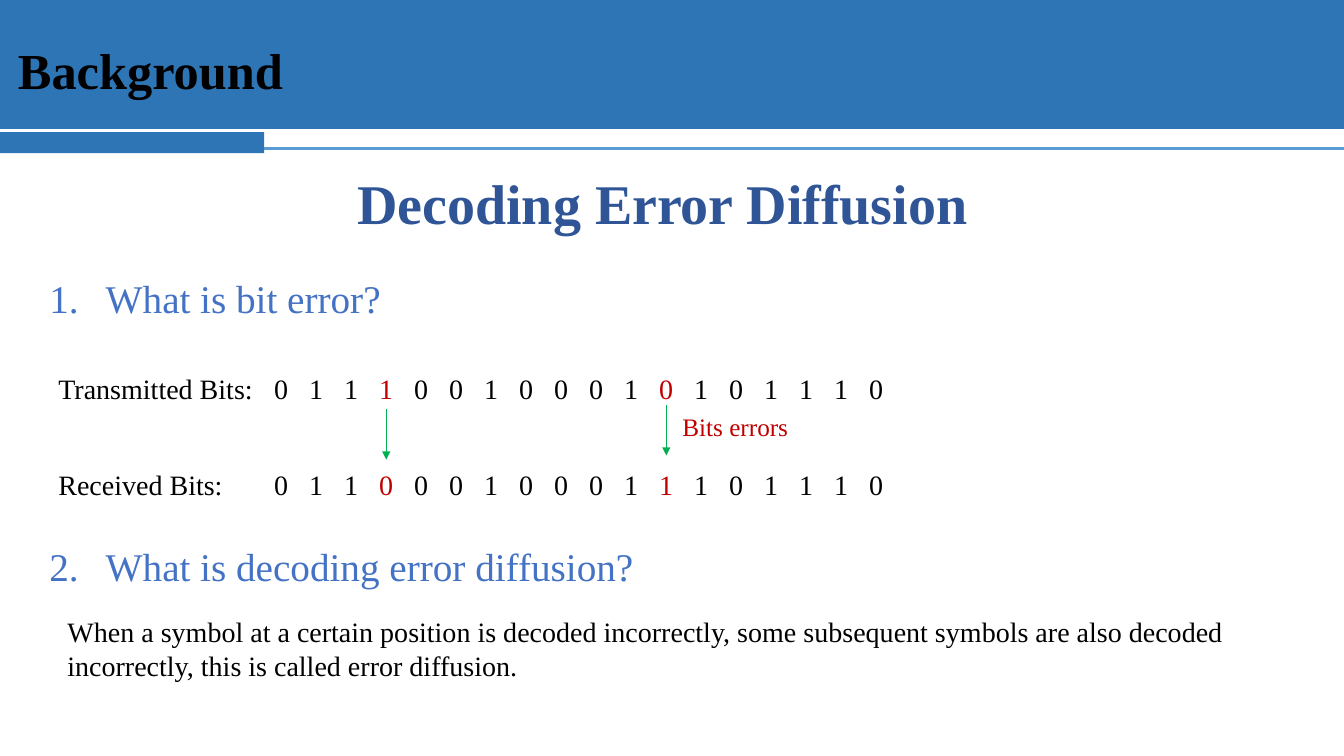
from lxml import etree
from pptx import Presentation
from pptx.dml.color import RGBColor
from pptx.enum.shapes import MSO_CONNECTOR, MSO_SHAPE
from pptx.enum.text import PP_ALIGN
from pptx.oxml.ns import qn
from pptx.util import Inches, Pt

# Content
SECTION = "Background"
TITLE = "Decoding Error Diffusion"
QUESTIONS = [("What is bit error?", 2.67), ("What is decoding error diffusion?", 5.33)]
BIT_ROWS = [
    ("Transmitted Bits:", "011100100010101110"),
    ("Received Bits:", "011000100011101110"),
]
ERROR_LABEL = "Bits errors"
ANSWER = ("When a symbol at a certain position is decoded incorrectly, some subsequent "
          "symbols are also decoded incorrectly, this is called error diffusion.")
ARROW_TOPS = [4.06, 4.02]

# Style
FONT = "Times New Roman"
BAND_BLUE = RGBColor(0x2E, 0x75, 0xB6)
RULE_BLUE = RGBColor(0x5B, 0x9B, 0xD5)
TITLE_BLUE = RGBColor(0x2F, 0x55, 0x97)
QUESTION_BLUE = RGBColor(0x44, 0x72, 0xC4)
ERROR_RED = RGBColor(0xC0, 0x00, 0x00)
ARROW_GREEN = RGBColor(0x00, 0xB0, 0x50)
BLACK = RGBColor(0, 0, 0)
RECTANGLE = MSO_SHAPE.RECTANGLE
STRAIGHT = MSO_CONNECTOR.STRAIGHT
CENTER = PP_ALIGN.CENTER

# Bit grid: each bit sits on a tab stop
BITS_LEFT = Inches(0.48)
TEXT_INSET = Inches(0.1)
FIRST_BIT = Inches(2.14)
BIT_PITCH = Pt(25)
HALF_DIGIT = Pt(5)

prs = Presentation()
prs.slide_width, prs.slide_height = Inches(13.33), Inches(7.5)
slide = prs.slides.add_slide(prs.slide_layouts[6])


def add_band(left, top, width, height):
    band = slide.shapes.add_shape(
        RECTANGLE, Inches(left), Inches(top), Inches(width), Inches(height))
    band.shadow.inherit = False
    band.fill.solid()
    band.fill.fore_color.rgb = BAND_BLUE
    band.line.fill.background()


def add_line(x1, y1, x2, y2, color, width):
    line = slide.shapes.add_connector(STRAIGHT, x1, y1, x2, y2)
    line.line.color.rgb = color
    line.line.width = Pt(width)
    etree.SubElement(line._element.spPr, qn("a:effectLst"))
    return line


def add_frame(left, top, width, height, wrap=True):
    frame = slide.shapes.add_textbox(
        Inches(left), Inches(top), Inches(width), Inches(height)).text_frame
    frame.word_wrap = wrap
    return frame


def style(paragraph, size, color, bold=False):
    font = paragraph.font
    font.name, font.size, font.bold = FONT, Pt(size), bold
    font.color.rgb = color


def add_text(text, box, size, color, bold=False, wrap=True):
    paragraph = add_frame(*box, wrap=wrap).paragraphs[0]
    paragraph.text = text
    style(paragraph, size, color, bold)
    return paragraph


# Header
add_band(0, 0, 13.33, 1.28)
add_band(0, 1.31, 2.62, 0.21)
add_line(Inches(2.62), Inches(1.47), Inches(13.33), Inches(1.47), RULE_BLUE, 2)
add_text(SECTION, (0.08, 0.34, 2.97, 0.71), 36, BLACK, bold=True, wrap=False)
add_text(TITLE, (2.27, 1.62, 8.6, 0.77), 40, TITLE_BLUE, bold=True).alignment = CENTER

# Numbered questions
for number, (question, top) in enumerate(QUESTIONS, 1):
    paragraph = add_text(question, (0.39, top, 6.22, 0.57), 28, QUESTION_BLUE)
    props = paragraph._p.get_or_add_pPr()
    props.set("marL", str(Inches(0.56)))
    props.set("indent", str(-Inches(0.56)))
    numbering = etree.Element(qn("a:buAutoNum"), type="arabicPeriod", startAt=str(number))
    props.insert(0, numbering)

# Bit rows, with the differing bits in red
sent, received = (bits for _, bits in BIT_ROWS)
errors = [i for i, pair in enumerate(zip(sent, received)) if pair[0] != pair[1]]
bits_frame = add_frame(0.48, 3.64, 9.49, 1.38)
for row, (label, bits) in enumerate(BIT_ROWS):
    paragraph = bits_frame.add_paragraph() if row else bits_frame.paragraphs[0]
    tabs = etree.SubElement(paragraph._p.get_or_add_pPr(), qn("a:tabLst"))
    paragraph.add_run().text = label
    for i, bit in enumerate(bits):
        etree.SubElement(tabs, qn("a:tab"), pos=str(FIRST_BIT + i * BIT_PITCH), algn="l")
        run = paragraph.add_run()
        run.text = "\t" + bit
        if i in errors:
            run.font.color.rgb = ERROR_RED
    style(paragraph, 20, BLACK)
    if row:
        paragraph.space_before = Pt(44)

# Arrows from each sent bit to the wrong received bit
for i, top in zip(errors, ARROW_TOPS):
    x = BITS_LEFT + TEXT_INSET + FIRST_BIT + i * BIT_PITCH + HALF_DIGIT
    arrow = add_line(x, Inches(top), x, Inches(top + 0.5), ARROW_GREEN, 0.5)
    etree.SubElement(arrow.line._get_or_add_ln(), qn("a:tailEnd"), type="triangle")
add_text(ERROR_LABEL, (6.67, 4.03, 1.38, 0.4), 18, ERROR_RED)

# Answer
add_text(ANSWER, (0.57, 6.05, 12.58, 0.77), 20, BLACK)

prs.save("out.pptx")
